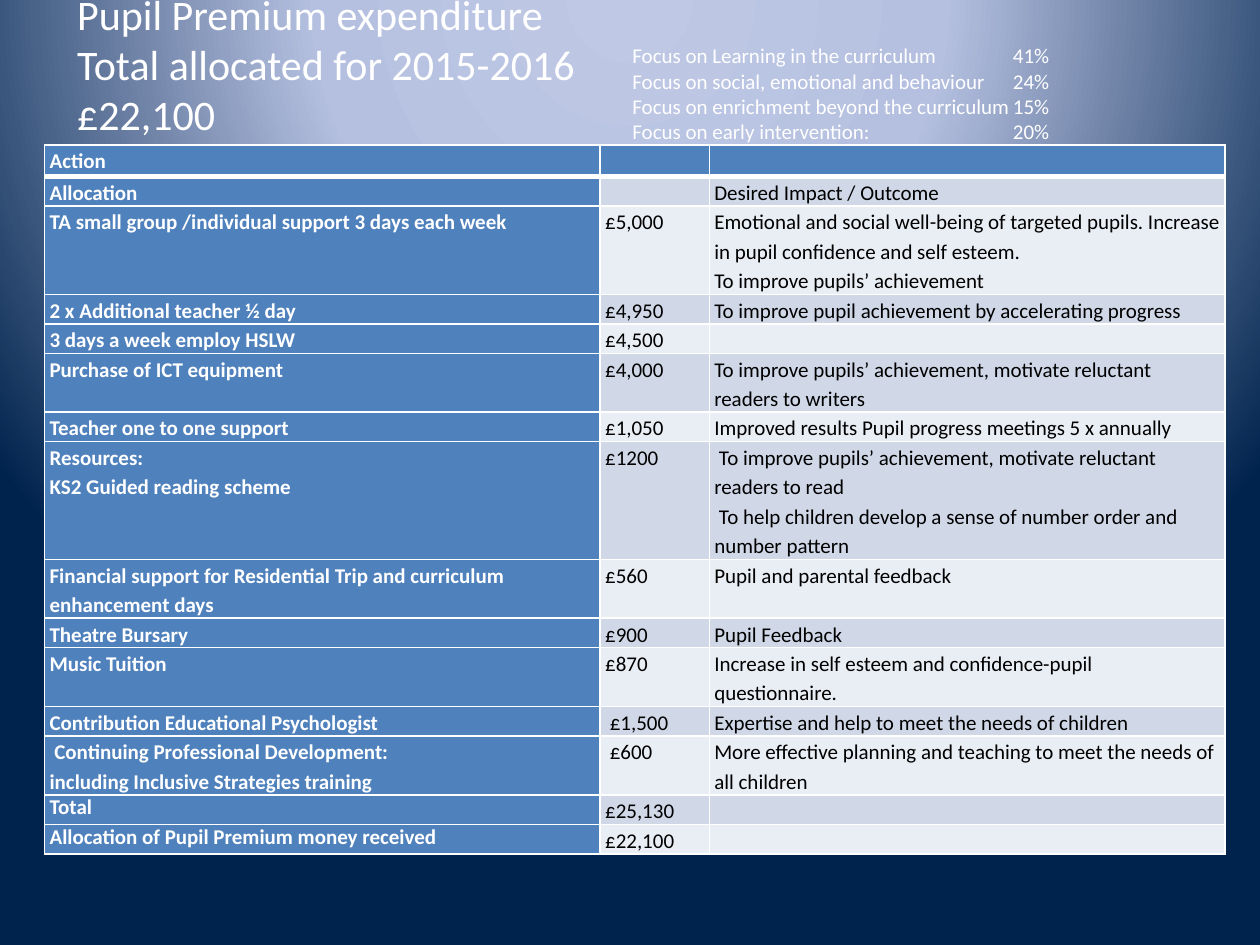
"""Build a slide that sets out pupil premium spending by action, cost and outcome."""
from lxml.etree import SubElement
from pptx import Presentation
from pptx.dml.color import RGBColor
from pptx.enum.text import MSO_ANCHOR, MSO_AUTO_SIZE, PP_ALIGN
from pptx.oxml import parse_xml
from pptx.oxml.ns import nsdecls, qn
from pptx.util import Cm, Pt

WHITE, BLACK, BLUE = "FFFFFF", "000000", "4F81BD"
BANDS = ("D0D8E8", "E9EDF4")
GRADIENT = [(0, "BFC9E5"), (40, "B5C0E0"), (100, "00234D")]

TITLE = "Pupil Premium expenditure\vTotal allocated for 2015-2016 £22,100"
FOCUS = [
    ("Focus on Learning in the curriculum", "41%"),
    ("Focus on social, emotional and behaviour", "24%"),
    ("Focus on enrichment beyond the curriculum", "15%"),
    ("Focus on early intervention:", "20%"),
]
COL_WIDTHS = (11.2, 2.2, 10.4)
LINE_HEIGHT = 0.59
ROWS = [
    (1, "Action", "", ""),
    (1, "Allocation", "", "Desired Impact / Outcome"),
    (3, "TA small group /individual support 3 days each week", "£5,000",
     "Emotional and social well-being of targeted pupils. Increase in pupil "
     "confidence and self esteem.\nTo improve pupils’ achievement"),
    (1, "2 x Additional teacher ½ day", "£4,950",
     "To improve pupil achievement by accelerating progress"),
    (1, "3 days a week employ HSLW", "£4,500", ""),
    (2, "Purchase of ICT equipment", "£4,000",
     "To improve pupils’ achievement, motivate reluctant readers to writers"),
    (1, "Teacher one to one support", "£1,050",
     "Improved results Pupil progress meetings 5 x annually"),
    (4, "Resources:\nKS2 Guided reading scheme", "£1200",
     " To improve pupils’ achievement, motivate reluctant readers to read\n"
     " To help children develop a sense of number order and number pattern"),
    (2, "Financial support for Residential Trip and curriculum enhancement days",
     "£560", "Pupil and parental feedback"),
    (1, "Theatre Bursary", "£900", "Pupil Feedback"),
    (1, "Music Tuition", "£870",
     "Increase in self esteem and confidence-pupil questionnaire."),
    (1, "Contribution Educational Psychologist", " £1,500",
     "Expertise and help to meet the needs of children"),
    (2, " Continuing Professional Development:\nincluding Inclusive Strategies training",
     " £600", "More effective planning and teaching to meet the needs of all children"),
    (1, "Total", "£25,130", ""),
    (1, "Allocation of Pupil Premium money received", "£22,100", ""),
]
SINGLE_SPACED = ("Total", "Allocation of Pupil Premium money received")


def rgb(color):
    return RGBColor.from_string(color)


def format_runs(p, size, color, bold=False):
    for r in p.runs:
        r.font.name, r.font.size, r.font.bold = "Calibri", Pt(size), bold
        r.font.color.rgb = rgb(color)


def set_background(slide):
    stops = "".join(f'<a:gs pos="{pos * 1000}"><a:srgbClr val="{color}"/></a:gs>'
                    for pos, color in GRADIENT)
    slide.element.cSld.insert(0, parse_xml(
        f'<p:bg {nsdecls("p", "a")}><p:bgPr><a:gradFill><a:gsLst>{stops}</a:gsLst>'
        '<a:path path="circle"><a:fillToRect l="50000" t="-80000" r="50000" b="180000"/>'
        '</a:path></a:gradFill><a:effectLst/></p:bgPr></p:bg>'))


def add_title(slide):
    sp = slide.shapes.title
    sp.left, sp.top, sp.width, sp.height = Cm(1.3), Cm(0), Cm(13.2), Cm(2.57)
    tf = sp.text_frame
    tf.text = TITLE
    tf.word_wrap, tf.auto_size = True, MSO_AUTO_SIZE.NONE
    tf.vertical_anchor = MSO_ANCHOR.MIDDLE
    tf.paragraphs[0].alignment = PP_ALIGN.LEFT
    format_runs(tf.paragraphs[0], 24, WHITE)


def add_focus(slide):
    tf = slide.shapes.add_textbox(Cm(12.5), Cm(0.74), Cm(12), Cm(2.3)).text_frame
    tf.word_wrap, tf.auto_size = True, MSO_AUTO_SIZE.SHAPE_TO_FIT_TEXT
    tf.text = "\n".join("\t".join(pair) for pair in FOCUS)
    for p in tf.paragraphs:
        tabs = SubElement(p._p.get_or_add_pPr(), qn("a:tabLst"))
        SubElement(tabs, qn("a:tab"), pos=str(Cm(7.67)), algn="l")
        format_runs(p, 12, WHITE)


def set_borders(cell, row):
    heavy = {0: "lnB", 1: "lnT"}.get(row)
    for side in ("lnL", "lnR", "lnT", "lnB"):
        ln = SubElement(cell._tc.get_or_add_tcPr(), qn(f"a:{side}"),
                        w=str(Pt(3 if side == heavy else 1)))
        SubElement(SubElement(ln, qn("a:solidFill")), qn("a:srgbClr"), val=WHITE)


def fill_cell(cell, row, col, text):
    head = row == 0 or col == 0
    cell.text = text
    cell.margin_left = cell.margin_right = Cm(0.1)
    cell.margin_top = cell.margin_bottom = 0
    set_borders(cell, row)
    cell.fill.solid()
    cell.fill.fore_color.rgb = rgb(BLUE if head else BANDS[(row - 1) % 2])
    for p in cell.text_frame.paragraphs:
        p.line_spacing = 1.0 if text in SINGLE_SPACED else 1.15
        format_runs(p, 12, WHITE if head else BLACK, head)
        if not text:
            SubElement(p._p, qn("a:endParaRPr"), sz="1200")


def add_spending(slide):
    height = LINE_HEIGHT * sum(row[0] for row in ROWS)
    table = slide.shapes.add_table(len(ROWS), len(COL_WIDTHS), Cm(0.9), Cm(2.92),
                                   Cm(sum(COL_WIDTHS)), Cm(height)).table
    for column, width in zip(table.columns, COL_WIDTHS):
        column.width = Cm(width)
    for i, (lines, *texts) in enumerate(ROWS):
        table.rows[i].height = Cm(LINE_HEIGHT * lines + (0.05 if i == 0 else 0))
        for j, text in enumerate(texts):
            fill_cell(table.cell(i, j), i, j, text)


def main():
    prs = Presentation()
    prs.slide_width, prs.slide_height = Cm(25.4), Cm(19.05)
    slide = prs.slides.add_slide(prs.slide_layouts[5])
    set_background(slide)
    add_title(slide)
    add_spending(slide)
    add_focus(slide)
    prs.save("out.pptx")


if __name__ == "__main__":
    main()
